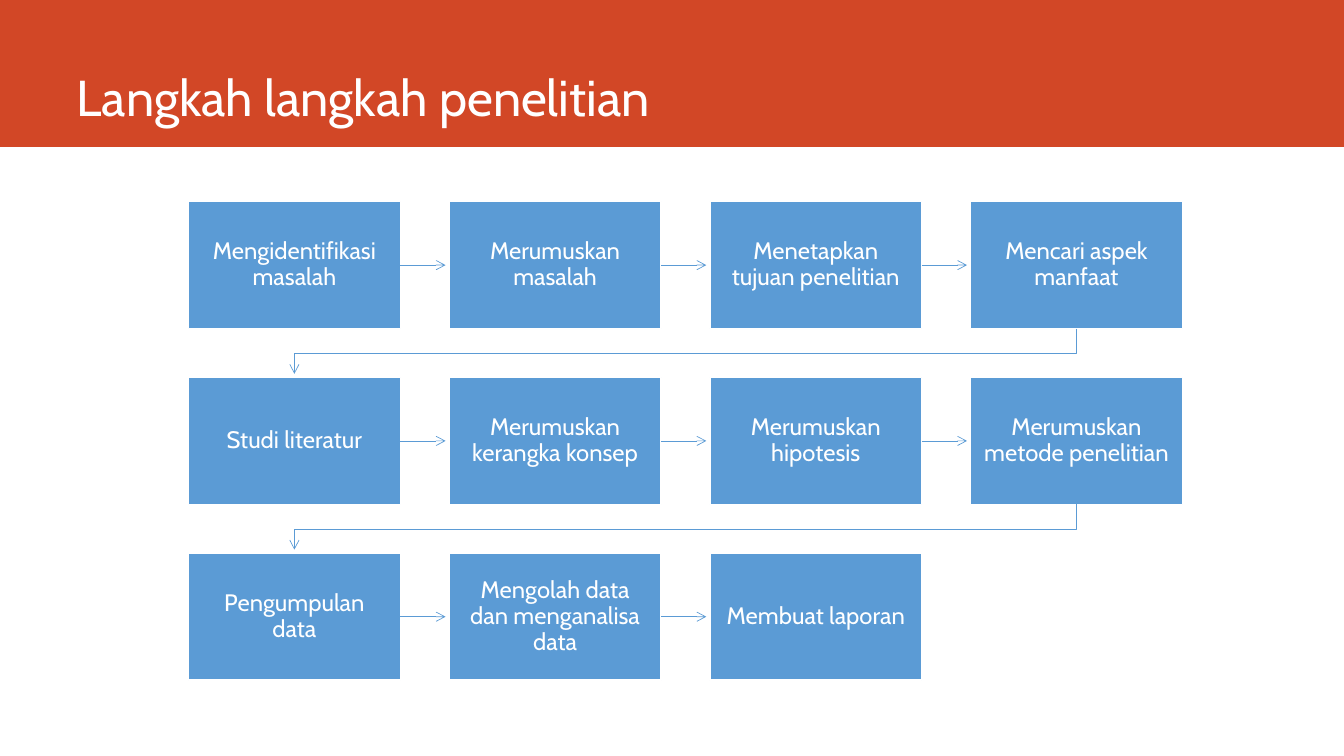
import pptx
import pptx.util
import pptx.dml.color
import pptx.enum.shapes
import pptx.enum.text
import pptx.oxml
import pptx.oxml.ns

Cm, Pt = pptx.util.Cm, pptx.util.Pt
SHAPE = pptx.enum.shapes.MSO_SHAPE
ANCHOR = pptx.enum.text.MSO_ANCHOR
ALIGN = pptx.enum.text.PP_ALIGN
FONT = "Cabin"
COLORS = {"banner": "D24726", "step": "5B9BD5", "white": "FFFFFF"}
STEPS = [
    "Mengidentifikasi masalah", "Merumuskan masalah",
    "Menetapkan tujuan penelitian", "Mencari aspek manfaat",
    "Studi literatur", "Merumuskan kerangka konsep",
    "Merumuskan hipotesis", "Merumuskan metode penelitian",
    "Pengumpulan data", "Mengolah data dan menganalisa data",
    "Membuat laporan",
]
COLS = 4
STEP_W, STEP_H = Cm(5.34), Cm(3.2)
REACH = Cm(1.14)  # arrow length, just short of the next step
BEND = Cm(0.62)


def color(name):
    return pptx.dml.color.RGBColor.from_string(COLORS[name])


def write(frame, text, size, align, anchor):
    frame.word_wrap = True
    frame.vertical_anchor = anchor
    para = frame.paragraphs[0]
    para.alignment = align
    para.line_spacing = 0.9
    run = para.add_run()
    run.text = text
    run.font.name = FONT
    run.font.size = Pt(size)
    run.font.color.rgb = color("white")


def add_rect(slide, x, y, w, h, fill):
    rect = slide.shapes.add_shape(SHAPE.RECTANGLE, x, y, w, h)
    rect.shadow.inherit = False
    rect.fill.solid()
    rect.fill.fore_color.rgb = color(fill)
    return rect


def add_header(slide, x, y, w, h):
    banner = add_rect(slide, x, y, w, h, "banner")
    banner.line.fill.background()
    title = slide.shapes.title
    title.left, title.top = x + Cm(1.68), y
    title.width, title.height = Cm(29.87), h - Cm(0.35)
    write(title.text_frame, "Langkah langkah penelitian", 36,
          ALIGN.LEFT, ANCHOR.BOTTOM)
    title.element.addprevious(banner.element)


def add_step(slide, x, y, text):
    step = add_rect(slide, x, y, STEP_W, STEP_H, "step")
    step.line.color.rgb = color("white")
    step.line.width = Pt(1)
    frame = step.text_frame
    frame.margin_left = frame.margin_right = Cm(0.33)
    frame.margin_top = frame.margin_bottom = Cm(0.33)
    write(frame, text, 17, ALIGN.CENTER, ANCHOR.MIDDLE)
    return step


def style_arrow(arrow):
    """Give a connector or open outline a thin line with an open head."""
    arrow.line.color.rgb = color("step")
    arrow.line.width = Pt(0.5)
    tail = pptx.oxml.parse_xml(
        f'<a:tailEnd {pptx.oxml.ns.nsdecls("a")} type="arrow"/>')
    arrow.line._get_or_add_ln().append(tail)


def add_arrow(slide, step):
    x, y = step.left + STEP_W, step.top + STEP_H // 2
    arrow = slide.shapes.add_connector(
        pptx.enum.shapes.MSO_CONNECTOR.STRAIGHT, x, y, x + REACH, y)
    arrow.begin_connect(step, 3)
    style_arrow(arrow)
    effects = pptx.oxml.parse_xml(
        f'<a:effectLst {pptx.oxml.ns.nsdecls("a")}/>')
    arrow.element.spPr.append(effects)


def add_return(slide, step, left):
    """Lead from the last step of a row to the first of the next."""
    x, y = step.left + STEP_W // 2, step.top + STEP_H
    end = left + STEP_W // 2
    pen = slide.shapes.build_freeform(x, y)
    pen.add_line_segments(
        [(x, y + BEND), (end, y + BEND), (end, y + REACH)], close=False)
    bend = pen.convert_to_shape()
    bend.fill.background()
    bend.shadow.inherit = False
    style_arrow(bend)


def add_flow(slide, x, y, w, h):
    rows = -(-len(STEPS) // COLS)
    dx = (w - STEP_W) // (COLS - 1)
    dy = (h - STEP_H) // (rows - 1)
    for i, text in enumerate(STEPS):
        row, col = divmod(i, COLS)
        step = add_step(slide, x + col * dx, y + row * dy, text)
        if i == len(STEPS) - 1:
            break
        if col == COLS - 1:
            add_return(slide, step, x)
        else:
            add_arrow(slide, step)


def main():
    deck = pptx.Presentation()
    deck.slide_width, deck.slide_height = Cm(33.87), Cm(19.05)
    slide = deck.slides.add_slide(deck.slide_layouts[5])
    add_header(slide, 0, 0, deck.slide_width, Cm(3.7))
    add_flow(slide, Cm(4.75), Cm(5.08), Cm(25.05), Cm(12.06))
    deck.save("out.pptx")


if __name__ == "__main__":
    main()
